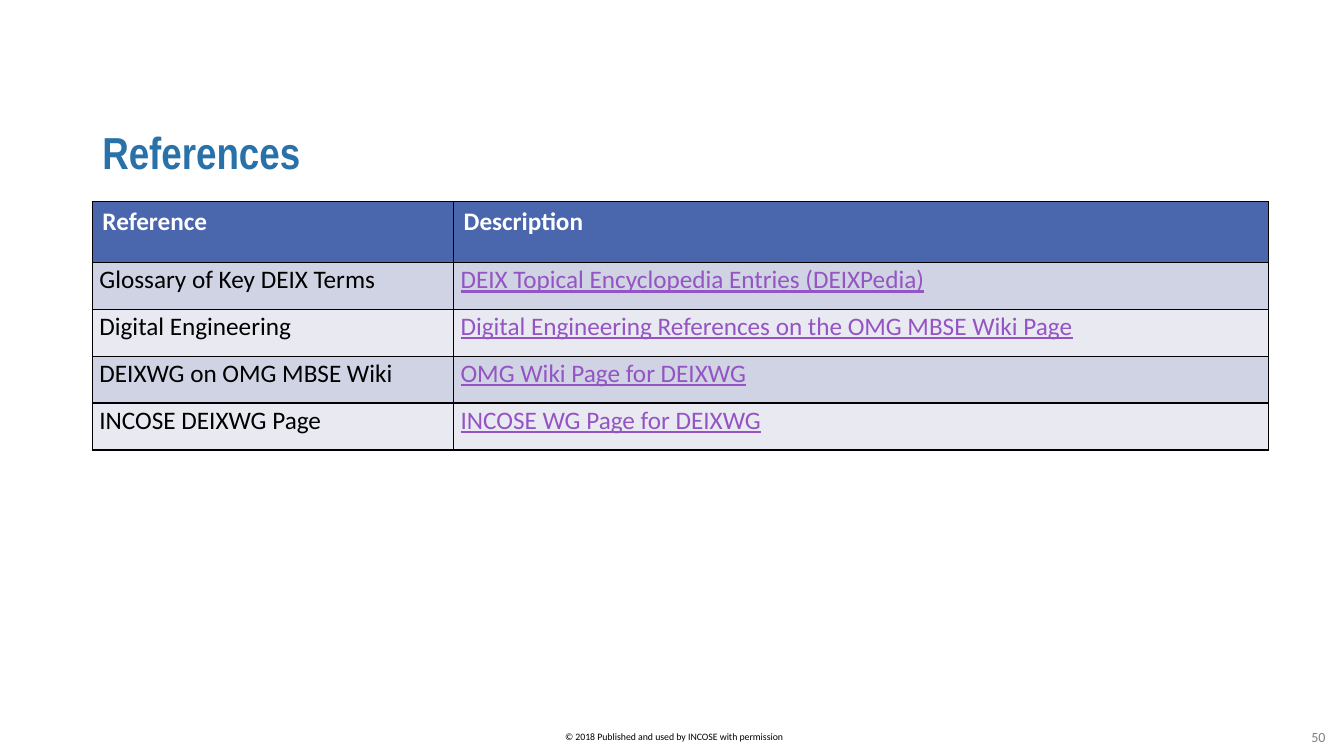
from lxml import etree
from pptx import Presentation, util as u
from pptx.dml import color
from pptx.enum import text as t
from pptx.oxml import ns

COLORS = {
    "title": "2971A9", "header": "4A66AC", "odd": "D0D3E3", "even": "E9EAF1",
    "link": "9454C3", "black": "000000", "white": "FFFFFF", "gray": "808080",
}
REFERENCES = [
    ("Glossary of Key DEIX Terms", "DEIX Topical Encyclopedia Entries (DEIXPedia)"),
    ("Digital Engineering", "Digital Engineering References on the OMG MBSE Wiki Page"),
    ("DEIXWG on OMG MBSE Wiki", "OMG Wiki Page for DEIXWG"),
    ("INCOSE DEIXWG Page", "INCOSE WG Page for DEIXWG"),
]


def rgb(name):
    return color.RGBColor.from_string(COLORS[name])


def write(frame, content, size=18, font="Calibri", ink="black", bold=False,
          underline=False, align=t.PP_ALIGN.LEFT, spacing=1.0):
    paragraph = frame.paragraphs[0]
    paragraph.alignment = align
    paragraph.line_spacing = spacing
    run = paragraph.add_run()
    run.text = content
    run.font.size = u.Pt(size)
    run.font.name = font
    run.font.bold = bold
    run.font.underline = underline
    run.font.color.rgb = rgb(ink)


class SlideBuilder:
    """Hold the style and the current slide, and add its elements."""

    def __init__(self, presentation):
        self.slide = presentation.slides.add_slide(presentation.slide_layouts[6])
        self.border_width = 1
        self.cell_inset = 5.04

    def label(self, content, left, top, width, height,
              anchor=t.MSO_ANCHOR.MIDDLE, **style):
        shape = self.slide.shapes.add_textbox(
            u.Pt(left), u.Pt(top), u.Pt(width), u.Pt(height))
        shape.text_frame.word_wrap = True
        shape.text_frame.vertical_anchor = anchor
        write(shape.text_frame, content, **style)

    def border(self, cell):
        properties = cell._tc.get_or_add_tcPr()
        for position, side in enumerate(("lnL", "lnR", "lnT", "lnB")):
            line = etree.Element(ns.qn(f"a:{side}"), w=str(u.Pt(self.border_width)))
            fill = etree.SubElement(line, ns.qn("a:solidFill"))
            etree.SubElement(fill, ns.qn("a:srgbClr"), val=COLORS["black"])
            properties.insert(position, line)

    def cell(self, cell, content, fill, **style):
        cell.fill.solid()
        cell.fill.fore_color.rgb = rgb(fill)
        self.border(cell)
        write(cell.text_frame, content, **style)

    def table(self, headings, rows, left, top, widths, header_height, row_height):
        height = header_height + row_height * len(rows)
        table = self.slide.shapes.add_table(
            len(rows) + 1, len(widths), u.Pt(left), u.Pt(top),
            u.Pt(sum(widths)), u.Pt(height)).table
        for column, width in zip(table.columns, widths):
            column.width = u.Pt(width)
        table.rows[0].height = u.Pt(header_height)
        for index, heading in enumerate(headings):
            self.cell(table.cell(0, index), heading, "header", ink="white", bold=True)
        for number, row in enumerate(rows, 1):
            table.rows[number].height = u.Pt(row_height)
            for index, content in enumerate(row):
                cell = table.cell(number, index)
                cell.margin_left = cell.margin_right = u.Pt(self.cell_inset)
                cell.margin_top = cell.margin_bottom = 0
                is_link = index == 1
                self.cell(cell, content, "odd" if number % 2 else "even",
                          ink="link" if is_link else "black",
                          underline=is_link, spacing=1.07)


def main():
    presentation = Presentation()
    presentation.slide_width = u.Pt(960)
    presentation.slide_height = u.Pt(540)
    builder = SlideBuilder(presentation)
    builder.label("© 2018 Published and used by INCOSE with permission",
                  346.5, 518.4, 270, 15.8, anchor=t.MSO_ANCHOR.TOP,
                  size=7, align=t.PP_ALIGN.CENTER)
    builder.label("References", 66, 84, 840, 54, size=32, font="Arial Narrow",
                  ink="title", bold=True, spacing=0.9)
    builder.table(("Reference", "Description"), REFERENCES, 66, 144,
                  (258, 582), 43.5, 33.5)
    builder.label("50", 923.6, 512, 36.4, 28.8, size=10, ink="gray",
                  align=t.PP_ALIGN.CENTER)
    presentation.save("out.pptx")


if __name__ == "__main__":
    main()
